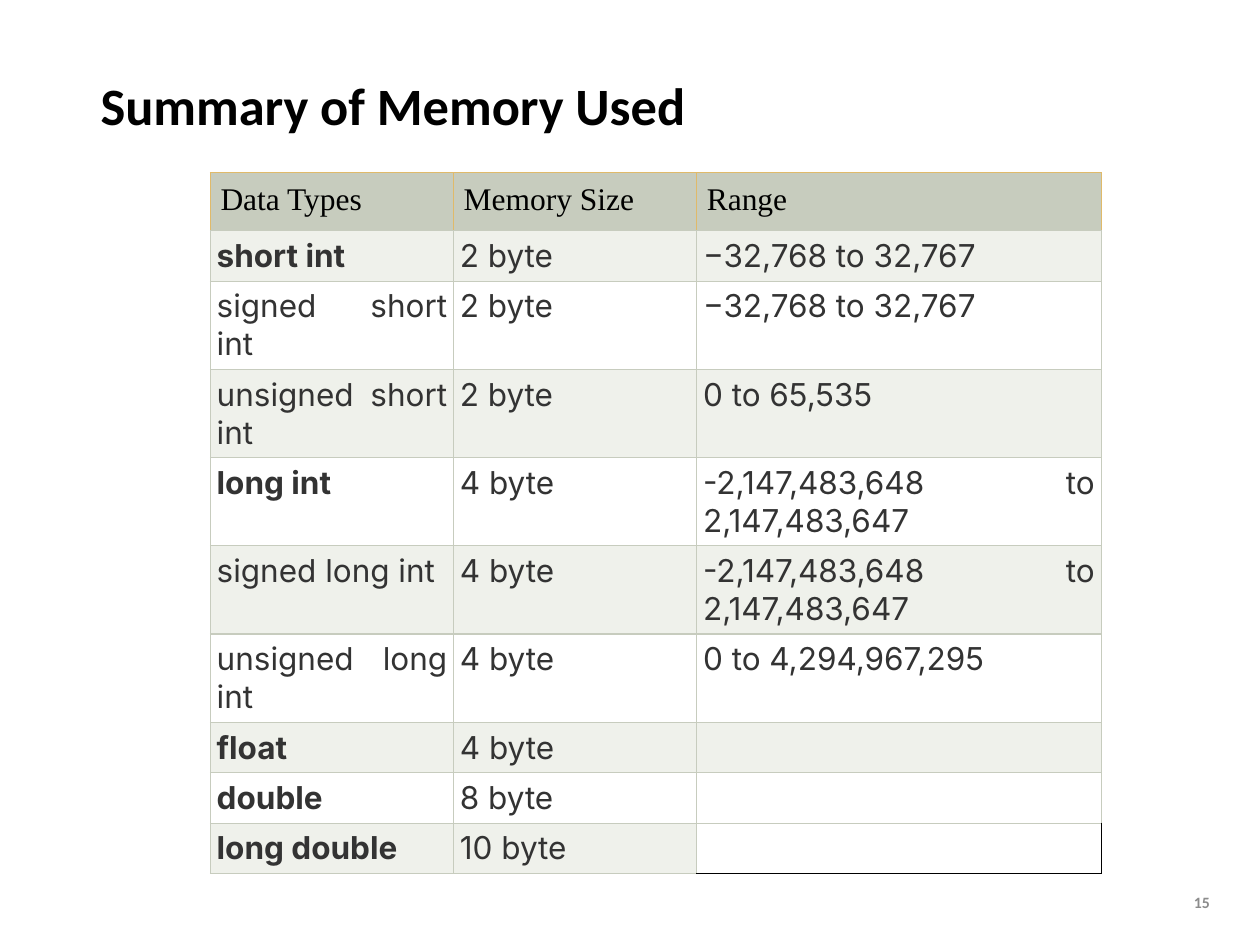
from typing import NamedTuple

from lxml import etree
from pptx import Presentation
from pptx import util as u
from pptx.dml.color import RGBColor
from pptx.enum import text
from pptx.oxml.ns import qn

SLIDE_W, SLIDE_H = 10, 7.5
SAGE, PALE, GOLD, WHITE, BLACK = "C7CCBE", "EFF1EB", "E0BA6A", "FFFFFF", "000000"
INK, GREY = "333333", "8C8C8C"
COLUMN_WIDTHS = (1.93, 1.93, 3.21)
HEADINGS = ("Data Types", "Memory Size", "Range")


class DataType(NamedTuple):
    name: str
    size: int
    value_range: str = ""
    is_basic: bool = False  # basic types are set in bold
    height: float = 0.25


class Style(NamedTuple):
    font: str
    size: float
    color: str
    bold: bool = False
    align: text.PP_ALIGN = text.PP_ALIGN.LEFT


SHORT_RANGE = "−32,768 to 32,767"
LONG_RANGE = "-2,147,483,648 to 2,147,483,647"
DATA_TYPES = (
    DataType("short int", 2, SHORT_RANGE, True),
    DataType("signed short int", 2, SHORT_RANGE),
    DataType("unsigned short int", 2, "0 to 65,535"),
    DataType("long int", 4, LONG_RANGE, True, 0.4),
    DataType("signed long int", 4, LONG_RANGE, False, 0.4),
    DataType("unsigned long int", 4, "0 to 4,294,967,295"),
    DataType("float", 4, "", True),
    DataType("double", 8, "", True),
    DataType("long double", 10, "", True),
)
HEADING = Style("Times New Roman", 18, BLACK)
BODY = Style("Inter", 18, INK, align=text.PP_ALIGN.JUSTIFY)


def rgb(color: str) -> RGBColor:
    return RGBColor.from_string(color)


def write(paragraph, words: str, style: Style) -> None:
    paragraph.text = words
    paragraph.alignment = style.align
    font = paragraph.font
    font.name, font.size, font.bold = style.font, u.Pt(style.size), style.bold
    font.color.rgb = rgb(style.color)


def add_label(slide, words: str, style: Style, left: float, top: float,
              width: float, height: float):
    """Places one line of text; lengths are shares of the slide."""
    box = slide.shapes.add_textbox(
        u.Inches(left * SLIDE_W), u.Inches(top * SLIDE_H),
        u.Inches(width * SLIDE_W), u.Inches(height * SLIDE_H))
    frame = box.text_frame
    frame.word_wrap = True
    frame.vertical_anchor = text.MSO_ANCHOR.MIDDLE
    write(frame.paragraphs[0], words, style)
    return frame.paragraphs[0]


def set_borders(cell, left: str, right: str, top: str, bottom: str) -> None:
    properties = cell._tc.get_or_add_tcPr()
    for side, color in zip("LRTB", (left, right, top, bottom)):
        line = etree.SubElement(properties, qn(f"a:ln{side}"), w=str(u.Pt(0.75)))
        fill = etree.SubElement(line, qn("a:solidFill"))
        etree.SubElement(fill, qn("a:srgbClr"), val=color)


def fill_cell(cell, words: str, style: Style, fill: str, inset: float,
              borders: tuple[str, str, str, str]) -> None:
    cell.margin_left = cell.margin_right = u.Inches(inset)
    cell.margin_top = cell.margin_bottom = u.Inches(inset)
    set_borders(cell, *borders)
    cell.fill.solid()
    cell.fill.fore_color.rgb = rgb(fill)
    write(cell.text_frame.paragraphs[0], words, style)


def add_memory_table(slide) -> None:
    heights = [0.31] + [data_type.height for data_type in DATA_TYPES]
    table = slide.shapes.add_table(
        len(heights), len(COLUMN_WIDTHS), u.Inches(1.67), u.Inches(1.37),
        u.Inches(sum(COLUMN_WIDTHS)), u.Inches(sum(heights))).table
    table.first_row = table.horz_banding = False
    for column, width in zip(table.columns, COLUMN_WIDTHS):
        column.width = u.Inches(width)
    for row, height in zip(table.rows, heights):
        row.height = u.Inches(height)

    # Heading row
    for column, heading in enumerate(HEADINGS):
        fill_cell(table.cell(0, column), heading, HEADING, SAGE, 0.08,
                  (GOLD, GOLD, GOLD, SAGE))

    # Banded rows, with the last cell open and edged in black
    for row, data_type in enumerate(DATA_TYPES, start=1):
        values = (data_type.name, f"{data_type.size} byte", data_type.value_range)
        for column, words in enumerate(values):
            is_last = row == len(DATA_TYPES) and column == len(values) - 1
            style = BODY._replace(bold=data_type.is_basic and column == 0)
            edge = BLACK if is_last else SAGE
            cell = table.cell(row, column)
            fill_cell(cell, words, style, PALE if row % 2 else WHITE, 0.05,
                      (SAGE, edge, SAGE, edge))
            if is_last:
                cell.fill.background()


def main() -> None:
    deck = Presentation()
    deck.slide_width, deck.slide_height = u.Inches(SLIDE_W), u.Inches(SLIDE_H)
    slide = deck.slides.add_slide(deck.slide_layouts[6])

    # Title
    title = add_label(slide, "Summary of Memory Used",
                      Style("Calibri", 30, BLACK, True), 0.07, 0.07, 0.9, 0.09)
    title.line_spacing = 0.9

    add_memory_table(slide)

    # Slide number
    add_label(slide, "15", Style("Calibri", 9, GREY, True, text.PP_ALIGN.RIGHT),
              0.93, 0.93, 0.04, 0.05)
    deck.save("out.pptx")


if __name__ == "__main__":
    main()
